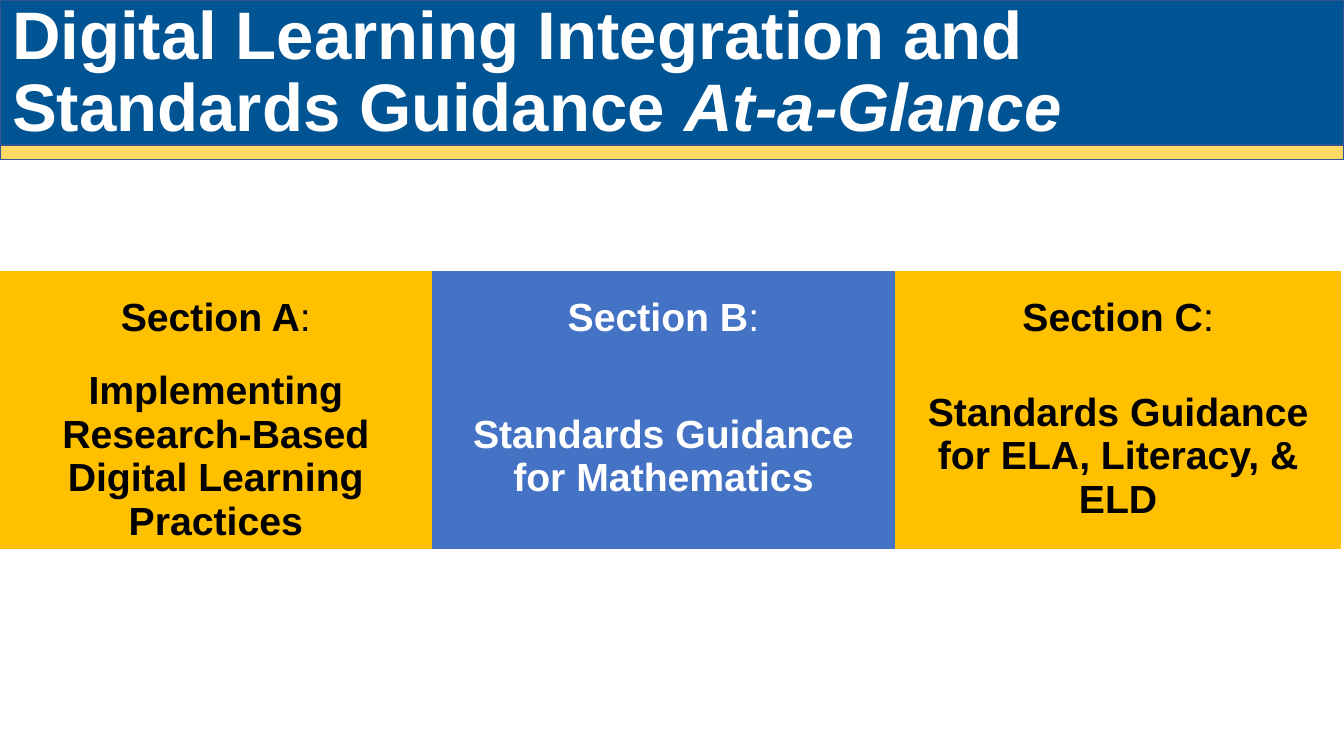
from dataclasses import dataclass

from pptx import Presentation
from pptx.dml.color import RGBColor
from pptx.enum.shapes import MSO_SHAPE
from pptx.enum.text import MSO_ANCHOR, MSO_AUTO_SIZE, PP_ALIGN
from pptx.slide import Slide
from pptx.table import _Cell
from pptx.util import Inches, Pt

RECT = MSO_SHAPE.RECTANGLE
MIDDLE = MSO_ANCHOR.MIDDLE
NO_FIT = MSO_AUTO_SIZE.NONE
LEFT, CENTER = PP_ALIGN.LEFT, PP_ALIGN.CENTER


@dataclass(frozen=True)
class Theme:
    font: str = "Arial"
    title_size: int = 48
    cell_size: int = 28
    navy: str = "005493"
    outline: str = "325491"
    pale_gold: str = "FFD966"
    gold: str = "FFC000"
    blue: str = "4472C4"
    white: str = "FFFFFF"
    black: str = "000000"


@dataclass(frozen=True)
class Band:
    top: float
    height: float
    fill: str


@dataclass(frozen=True)
class Section:
    label: str
    topic: str
    width: float
    fill: str
    color: str


THEME = Theme()
SLIDE_W, SLIDE_H = 13.33, 7.5
BANDS = [Band(0, 1.44, THEME.navy), Band(1.44, 0.14, THEME.pale_gold)]
SECTIONS = [
    Section("Section A", "Implementing Research-Based Digital Learning Practices",
            4.28, THEME.gold, THEME.black),
    Section("Section B", "Standards Guidance for Mathematics",
            4.6, THEME.blue, THEME.white),
    Section("Section C", "Standards Guidance for ELA, Literacy, & ELD",
            4.42, THEME.gold, THEME.black),
]
TABLE_TOP = 2.69
ROW_HEIGHTS = [0.92, 1.7]


def add_run(p, text: str, size: int, color: str, **formats) -> None:
    r = p.add_run()
    r.text = text
    values = {"name": THEME.font, "size": Pt(size), "bold": True, **formats}
    for name, value in values.items():
        setattr(r.font, name, value)
    r.font.color.rgb = RGBColor.from_string(color)


def add_band(slide: Slide, band: Band) -> None:
    sp = slide.shapes.add_shape(RECT, 0, Inches(band.top),
                                Inches(SLIDE_W), Inches(band.height))
    sp.shadow.inherit = False
    sp.fill.solid()
    sp.fill.fore_color.rgb = RGBColor.from_string(band.fill)
    sp.line.color.rgb = RGBColor.from_string(THEME.outline)
    sp.line.width = Pt(1)


def add_title(slide: Slide) -> None:
    """Fill the title placeholder and bring it in front of the bands."""
    title = slide.shapes.title
    box = {"left": 0.02, "top": 0.16, "width": 11.2, "height": 1.14}
    for name, value in box.items():
        setattr(title, name, Inches(value))
    tf = title.text_frame
    for name, value in {"auto_size": NO_FIT, "vertical_anchor": MIDDLE,
                        "word_wrap": True}.items():
        setattr(tf, name, value)
    p = tf.paragraphs[0]
    p.alignment, p.line_spacing = LEFT, 0.9
    add_run(p, "Digital Learning Integration and Standards Guidance ",
            THEME.title_size, THEME.white)
    add_run(p, "At-a-Glance", THEME.title_size, THEME.white, italic=True)
    slide.shapes._spTree.append(title._element)


def start_cell(cell: _Cell, fill: str):
    """Fill and centre a cell, and return its paragraph."""
    cell.fill.solid()
    cell.fill.fore_color.rgb = RGBColor.from_string(fill)
    cell.vertical_anchor = MIDDLE
    p = cell.text_frame.paragraphs[0]
    p.alignment = CENTER
    return p


def add_section_table(slide: Slide) -> None:
    width = sum(section.width for section in SECTIONS)
    frame = slide.shapes.add_table(
        len(ROW_HEIGHTS), len(SECTIONS), 0, Inches(TABLE_TOP),
        Inches(width), Inches(sum(ROW_HEIGHTS)))
    table = frame.table
    # No Style, No Grid: removes the white rules between cells
    table._tbl.tblPr.find("{*}tableStyleId").text = (
        "{2D5ABB26-0587-4C30-8999-92F81FD0307C}")
    for row, height in zip(table.rows, ROW_HEIGHTS):
        row.height = Inches(height)
    for col, section in enumerate(SECTIONS):
        table.columns[col].width = Inches(section.width)
        head = start_cell(table.cell(0, col), section.fill)
        add_run(head, section.label, THEME.cell_size, section.color)
        add_run(head, ":", THEME.cell_size, section.color, bold=False)
        body = start_cell(table.cell(1, col), section.fill)
        add_run(body, section.topic, THEME.cell_size, section.color)


def main() -> None:
    prs = Presentation()
    prs.slide_width, prs.slide_height = Inches(SLIDE_W), Inches(SLIDE_H)
    slide = prs.slides.add_slide(prs.slide_layouts.get_by_name("Title Only"))
    for band in BANDS:
        add_band(slide, band)
    add_title(slide)
    add_section_table(slide)
    prs.save("out.pptx")


if __name__ == "__main__":
    main()
